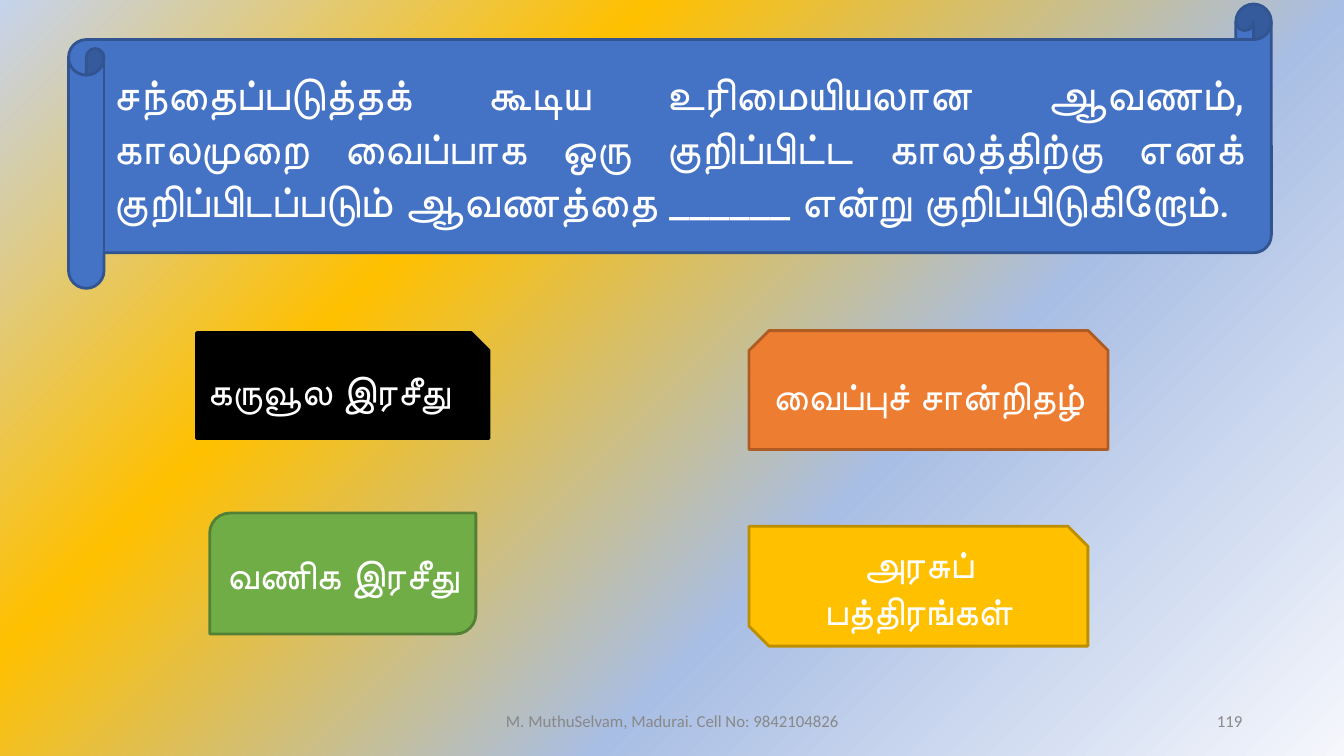
import pptx
import pptx.dml.color
import pptx.enum.shapes
import pptx.enum.text
import pptx.oxml
import pptx.util

Inches = pptx.util.Inches
RGBColor = pptx.dml.color.RGBColor
Shape = pptx.enum.shapes.MSO_SHAPE
Align = pptx.enum.text.PP_ALIGN

WHITE = RGBColor(0xFF, 0xFF, 0xFF)
BLACK = RGBColor(0x00, 0x00, 0x00)
GRAY = RGBColor(0x88, 0x88, 0x88)
BLUE = RGBColor(0x44, 0x72, 0xC4)
NAVY = RGBColor(0x32, 0x54, 0x91)
ORANGE = RGBColor(0xED, 0x7D, 0x31)
RUST = RGBColor(0xAF, 0x5C, 0x24)
GOLD = RGBColor(0xFF, 0xC0, 0x00)
OCHRE = RGBColor(0xBD, 0x8E, 0x00)
GREEN = RGBColor(0x70, 0xAD, 0x47)
MOSS = RGBColor(0x53, 0x80, 0x35)
PALE = RGBColor(0xF5, 0xF7, 0xFC)
SKY = RGBColor(0xA9, 0xBE, 0xE4)
MIST = RGBColor(0xC5, 0xD3, 0xED)

STOPS = [(0, PALE), (36, SKY), (69, GOLD), (100, MIST)]

QUERY = (
    "சந்தைப்படுத்தக் கூடிய உரிமையியலான ஆவணம், "
    "காலமுறை வைப்பாக ஒரு குறிப்பிட்ட காலத்திற்கு எனக் "
    "குறிப்பிடப்படும் ஆவணத்தை ______ என்று குறிப்பிடுகிறோம்."
)

# Preset, box, fill, line, text
CHOICES = [
    (Shape.SNIP_1_RECTANGLE, (1.95, 3.3, 2.9, 1.05), BLACK, BLACK,
     "கருவூல இரசீது  "),
    (Shape.SNIP_2_SAME_RECTANGLE, (7.43, 3.28, 3.56, 1.18), ORANGE, RUST,
     "வைப்புச் சான்றிதழ் "),
    (Shape.SNIP_2_DIAG_RECTANGLE, (7.43, 5.22, 3.36, 1.19), GOLD, OCHRE,
     "அரசுப் பத்திரங்கள்"),
    (Shape.ROUND_2_DIAG_RECTANGLE, (2.08, 5.09, 2.64, 1.2), GREEN, MOSS,
     "வணிக இரசீது "),
]


def paint_back(slide):
    """Fill the background with a gradient spreading from the lower right."""
    stops = "".join(
        f'<a:gs pos="{pos * 1000}"><a:srgbClr val="{color}"/></a:gs>'
        for pos, color in STOPS
    )
    back = pptx.oxml.parse_xml(
        '<p:bg xmlns:p="http://schemas.openxmlformats.org/presentationml/2006/main"'
        ' xmlns:a="http://schemas.openxmlformats.org/drawingml/2006/main">'
        f'<p:bgPr><a:gradFill rotWithShape="1"><a:gsLst>{stops}</a:gsLst>'
        '<a:path path="circle"><a:fillToRect l="100000" t="100000"/></a:path>'
        '</a:gradFill><a:effectLst/></p:bgPr></p:bg>'
    )
    slide.element.cSld.insert(0, back)


def write(shape, text, align, size, face, color):
    frame = shape.text_frame
    frame.word_wrap = True
    frame.vertical_anchor = pptx.enum.text.MSO_ANCHOR.MIDDLE
    para = frame.paragraphs[0]
    para.alignment = align
    run = para.add_run()
    run.text = text
    for key, value in {"size": pptx.util.Pt(size), "name": face}.items():
        setattr(run.font, key, value)
    run.font.color.rgb = color


def add_panel(slide, preset, box, fill, line, text, align=Align.CENTER, size=28):
    panel = slide.shapes.add_shape(preset, *map(Inches, box))
    panel.shadow.inherit = False
    panel.fill.solid()
    panel.fill.fore_color.rgb = fill
    panel.line.color.rgb = line
    panel.line.width = pptx.util.Pt(2)
    write(panel, text, align, size, "Roboto", WHITE)


def add_note(slide, left, width, text, align):
    """Add a small gray text in the footer row."""
    box = slide.shapes.add_textbox(*map(Inches, (left, 6.95, width, 0.4)))
    write(box, text, align, 12, "Calibri", GRAY)


def main():
    deck = pptx.Presentation()
    deck.slide_width = Inches(13.33)
    deck.slide_height = Inches(7.5)
    slide = deck.slides.add_slide(deck.slide_layouts[6])
    paint_back(slide)
    add_panel(slide, Shape.HORIZONTAL_SCROLL, (0.68, 0.04, 11.93, 2.82),
              BLUE, NAVY, QUERY, Align.JUSTIFY, 32)
    for choice in CHOICES:
        add_panel(slide, *choice)
    add_note(slide, 4.42, 4.5, "M. MuthuSelvam, Madurai. Cell No: 9842104826",
             Align.CENTER)
    add_note(slide, 9.42, 3, "119", Align.RIGHT)
    deck.save("out.pptx")


if __name__ == "__main__":
    main()
